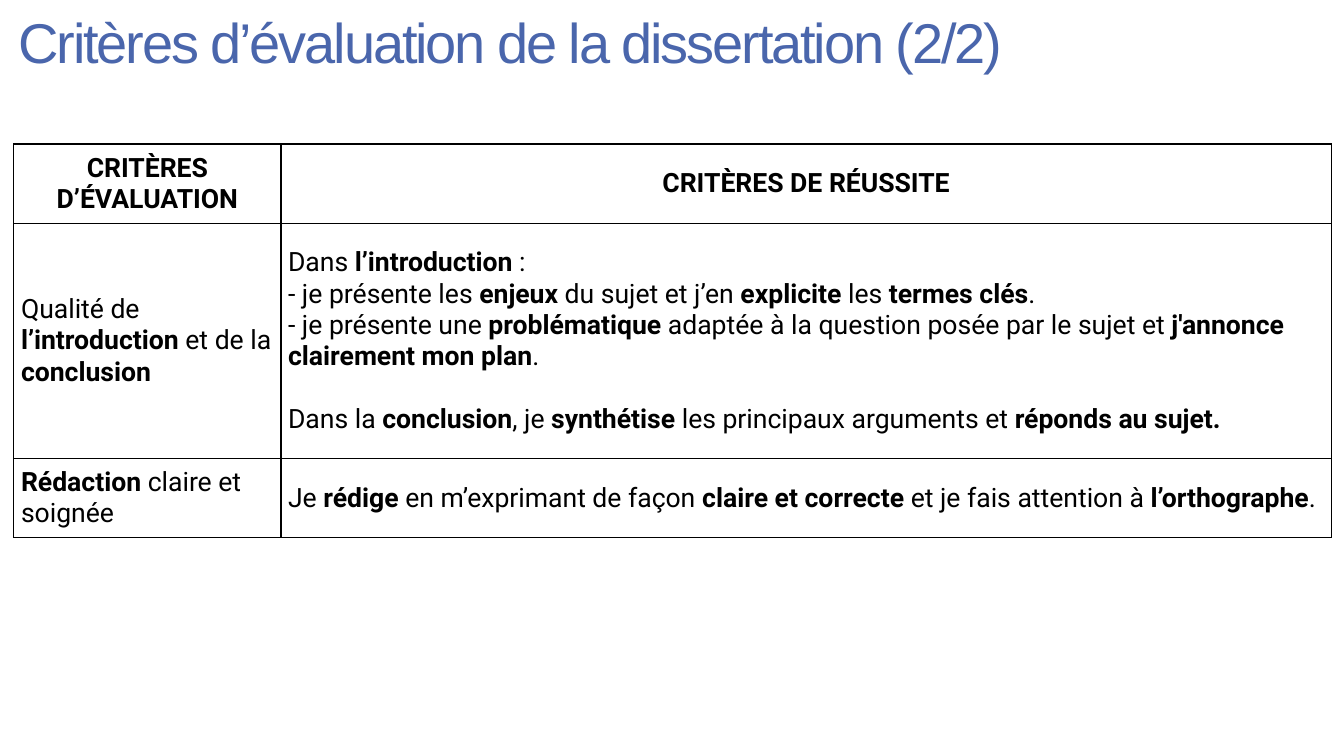
from dataclasses import dataclass

from lxml.etree import SubElement
from pptx import Presentation
from pptx.dml.color import RGBColor
from pptx.enum.text import MSO_ANCHOR, PP_ALIGN
from pptx.oxml.ns import qn
from pptx.util import Cm, Pt


@dataclass(frozen=True)
class Theme:
    """Colours, fonts and type sizes of the slide."""
    title_colour: str = "4A66AC"
    ink: str = "000000"
    title_font: str = "Arial"
    body_font: str = "Roboto"
    title_size: float = 40
    body_size: float = 19
    title_spacing: float = -1.5
    section_gap: float = 22.3
    border_width: float = 1


class SlideBuilder:
    """Adds styled elements to one slide."""

    def __init__(self, slide, theme):
        self.slide = slide
        self.theme = theme

    def add_run(self, paragraph, text, font, size, colour, bold=False):
        """Append one formatted run and return it."""
        run = paragraph.add_run()
        run.text = text
        run.font.name = font
        run.font.size = Pt(size)
        run.font.bold = bold
        run.font.color.rgb = RGBColor.from_string(colour)
        return run

    def add_title(self, text, left, top, width, height):
        """Add the slide title in a text box."""
        theme = self.theme
        frame = self.slide.shapes.add_textbox(Cm(left), Cm(top), Cm(width), Cm(height)).text_frame
        frame.word_wrap = True
        frame.vertical_anchor = MSO_ANCHOR.MIDDLE
        frame.margin_left = frame.margin_right = Cm(0.13)
        frame.margin_top = frame.margin_bottom = Cm(0.13)
        paragraph = frame.paragraphs[0]
        paragraph.line_spacing = 0.85
        run = self.add_run(paragraph, text, theme.title_font, theme.title_size, theme.title_colour)
        run.font._element.set("spc", str(int(theme.title_spacing * 100)))

    def add_table(self, rows, left, top, widths, heights):
        """Add a bordered table whose first row is centred."""
        table = self.slide.shapes.add_table(
            len(rows), len(widths), Cm(left), Cm(top), Cm(sum(widths)), Cm(sum(heights))
        ).table
        table.first_row = table.horz_banding = False
        for column, width in zip(table.columns, widths):
            column.width = Cm(width)
        for row, height in zip(table.rows, heights):
            row.height = Cm(height)
        for row_index, texts in enumerate(rows):
            alignment = PP_ALIGN.LEFT if row_index else PP_ALIGN.CENTER
            for column_index, text in enumerate(texts):
                self.fill_cell(table.cell(row_index, column_index), text, alignment)

    def fill_cell(self, cell, text, alignment):
        """Write marked-up lines: asterisks enclose bold, a leading # opens a section."""
        theme = self.theme
        cell.vertical_anchor = MSO_ANCHOR.MIDDLE
        cell.margin_left = cell.margin_right = Cm(0.18)
        cell.margin_top = cell.margin_bottom = 0
        self.add_borders(cell)
        cell.fill.background()
        for index, line in enumerate(text.split("\n")):
            paragraph = cell.text_frame.add_paragraph() if index else cell.text_frame.paragraphs[0]
            paragraph.alignment = alignment
            if line.startswith("#"):
                paragraph.space_before = Pt(theme.section_gap)
            for part_index, part in enumerate(line.lstrip("#").split("*")):
                if part:
                    self.add_run(paragraph, part, theme.body_font, theme.body_size,
                                 theme.ink, bold=part_index % 2 == 1)

    def add_borders(self, cell):
        """Draw a solid line on all four sides of a cell."""
        properties = cell._tc.get_or_add_tcPr()
        for side in ("a:lnL", "a:lnR", "a:lnT", "a:lnB"):
            line = SubElement(properties, qn(side), w=str(Pt(self.theme.border_width)))
            fill = SubElement(line, qn("a:solidFill"))
            SubElement(fill, qn("a:srgbClr"), val=self.theme.ink)


CRITERIA = [
    ("*CRITÈRES D’ÉVALUATION*", "*CRITÈRES DE RÉUSSITE*"),
    (
        "Qualité de *l’introduction* et de la *conclusion*",
        "Dans *l’introduction* :\n"
        "- je présente les *enjeux* du sujet et j’en *explicite* les *termes clés*.\n"
        "- je présente une *problématique* adaptée à la question posée par le sujet et "
        "*j'annonce clairement mon plan*.\n"
        "#Dans la *conclusion*, je *synthétise* les principaux arguments et *réponds au sujet.*",
    ),
    (
        "*Rédaction* claire et soignée",
        "Je *rédige *en m’exprimant de façon *claire et correcte* et je fais attention à "
        "*l’orthographe*.",
    ),
]


def main():
    """Build and save the presentation."""
    presentation = Presentation()
    presentation.slide_width = Cm(33.87)
    presentation.slide_height = Cm(19.05)
    slide = presentation.slides.add_slide(presentation.slide_layouts[6])
    builder = SlideBuilder(slide, Theme())
    builder.add_table(CRITERIA, 0.35, 3.63, widths=(6.73, 26.47), heights=(2, 5.92, 2))
    builder.add_title("Critères d’évaluation de la dissertation (2/2)", 0.33, -1.14, 29.92, 4.6)
    presentation.save("out.pptx")


if __name__ == "__main__":
    main()
